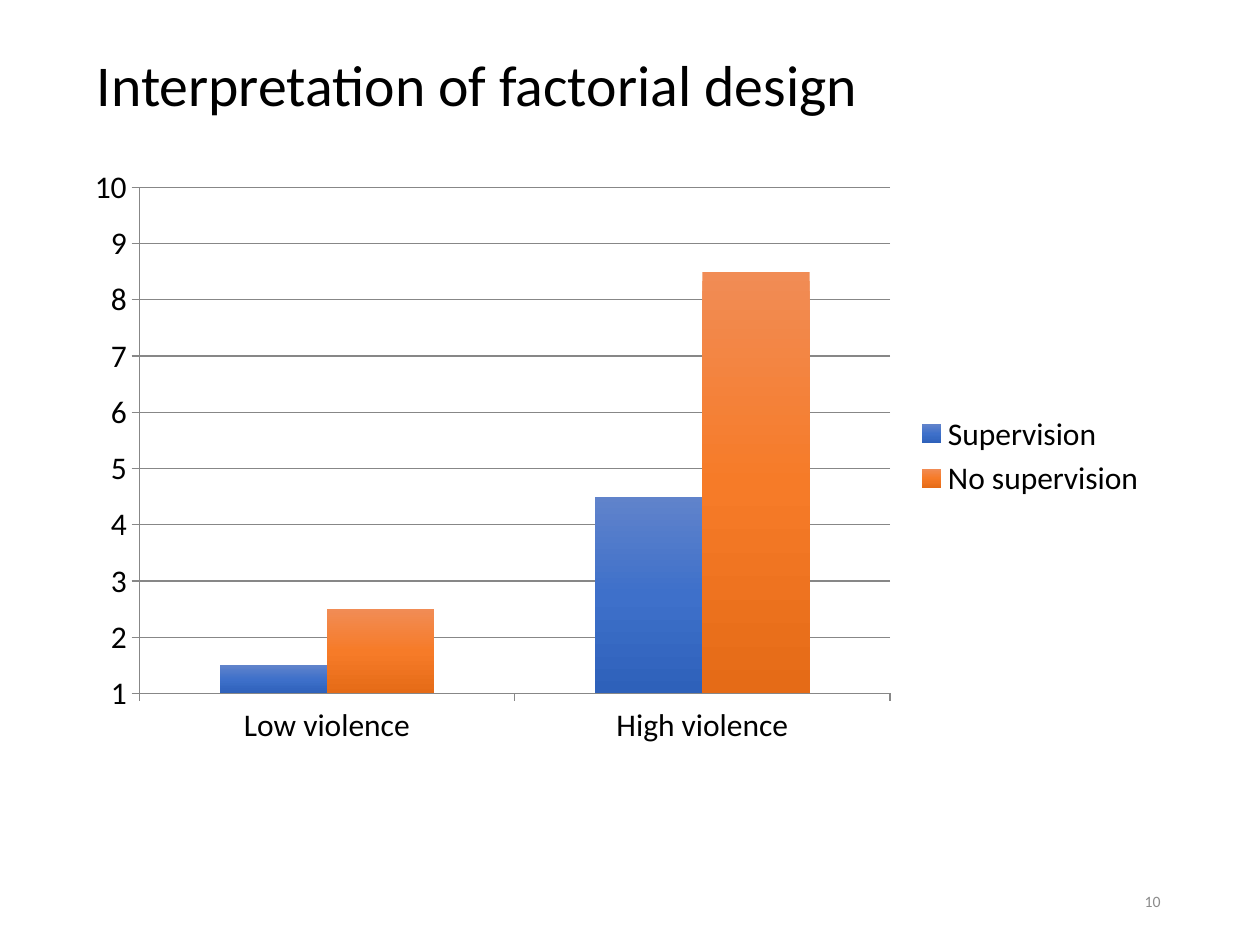
from copy import deepcopy

from pptx import Presentation
from pptx import util as u
from pptx.chart.data import CategoryChartData
from pptx.dml.color import RGBColor
from pptx.enum import chart as ch, text

FONT = "Calibri"
HUES = {
    "ink": "000000",
    "page": "8C8C8C",
    "grid": "878787",
    "Supervision": ("6083CB", "3E70CA", "2E61BA"),
    "No supervision": ("F18C55", "F67B28", "E56B17"),
}


def write(words, box, size, hue="ink", align=text.PP_ALIGN.LEFT, space=1.0):
    frame = slide.shapes.add_textbox(*map(u.Inches, box)).text_frame
    frame.word_wrap = True
    frame.vertical_anchor = text.MSO_ANCHOR.MIDDLE
    para = frame.paragraphs[0]
    para.text = words
    para.alignment = align
    para.line_spacing = space
    para.font.name = FONT
    para.font.size = u.Pt(size)
    para.font.color.rgb = RGBColor.from_string(HUES[hue])


def shade(bars, hues):
    """Fill a series with a three-stop gradient from top to bottom."""
    fill = bars.format.fill
    fill.gradient()
    fill.gradient_angle = 270
    first = bars.format.fill.gradient_stops[0]
    stops = bars._element.xpath(".//a:gsLst")[0]
    stops.insert(1, deepcopy(stops[0]))
    for stop, hue, place in zip(fill.gradient_stops, hues, (0, 0.5, 1)):
        stop.color.rgb = RGBColor.from_string(hue)
        stop.position = place


deck = Presentation()
deck.slide_width, deck.slide_height = u.Inches(10), u.Inches(7.5)
slide = deck.slides.add_slide(deck.slide_layouts[6])

write("Interpretation of factorial design", (0.67, -0.03, 8.62, 1.45), 33, space=0.9)

# Chart
data = CategoryChartData()
data.categories = ["Low violence", "High violence"]
data.add_series("Supervision", (1.5, 4.5))
data.add_series("No supervision", (2.5, 8.5))
box = map(u.Inches, (0.58, 1.24, 8.62, 4.76))
chart = slide.shapes.add_chart(ch.XL_CHART_TYPE.COLUMN_CLUSTERED, *box, data).chart
chart.has_title = False
chart.font.name = FONT
chart.font.size = u.Pt(18)
chart.font.color.rgb = RGBColor.from_string(HUES["ink"])

chart.has_legend = True
chart.legend.position = ch.XL_LEGEND_POSITION.RIGHT
chart.legend.include_in_layout = False

plot = chart.plots[0]
plot.gap_width = 150
plot.overlap = 0
plot.vary_by_categories = False
for bars in plot.series:
    bars.invert_if_negative = False
    shade(bars, HUES[bars.name])

scale = chart.value_axis
scale.minimum_scale, scale.maximum_scale, scale.major_unit = 1, 10, 1
scale.has_major_gridlines = True
for axis in (scale, chart.category_axis):
    axis.major_tick_mark = ch.XL_TICK_MARK.OUTSIDE
    axis.minor_tick_mark = ch.XL_TICK_MARK.NONE
for part in (scale, chart.category_axis, scale.major_gridlines):
    line = part.format.line
    line.width = u.Pt(0.75)
    line.color.rgb = RGBColor.from_string(HUES["grid"])

write("10", (7.06, 6.95, 2.25, 0.4), 9, hue="page", align=text.PP_ALIGN.RIGHT)

deck.save("out.pptx")
